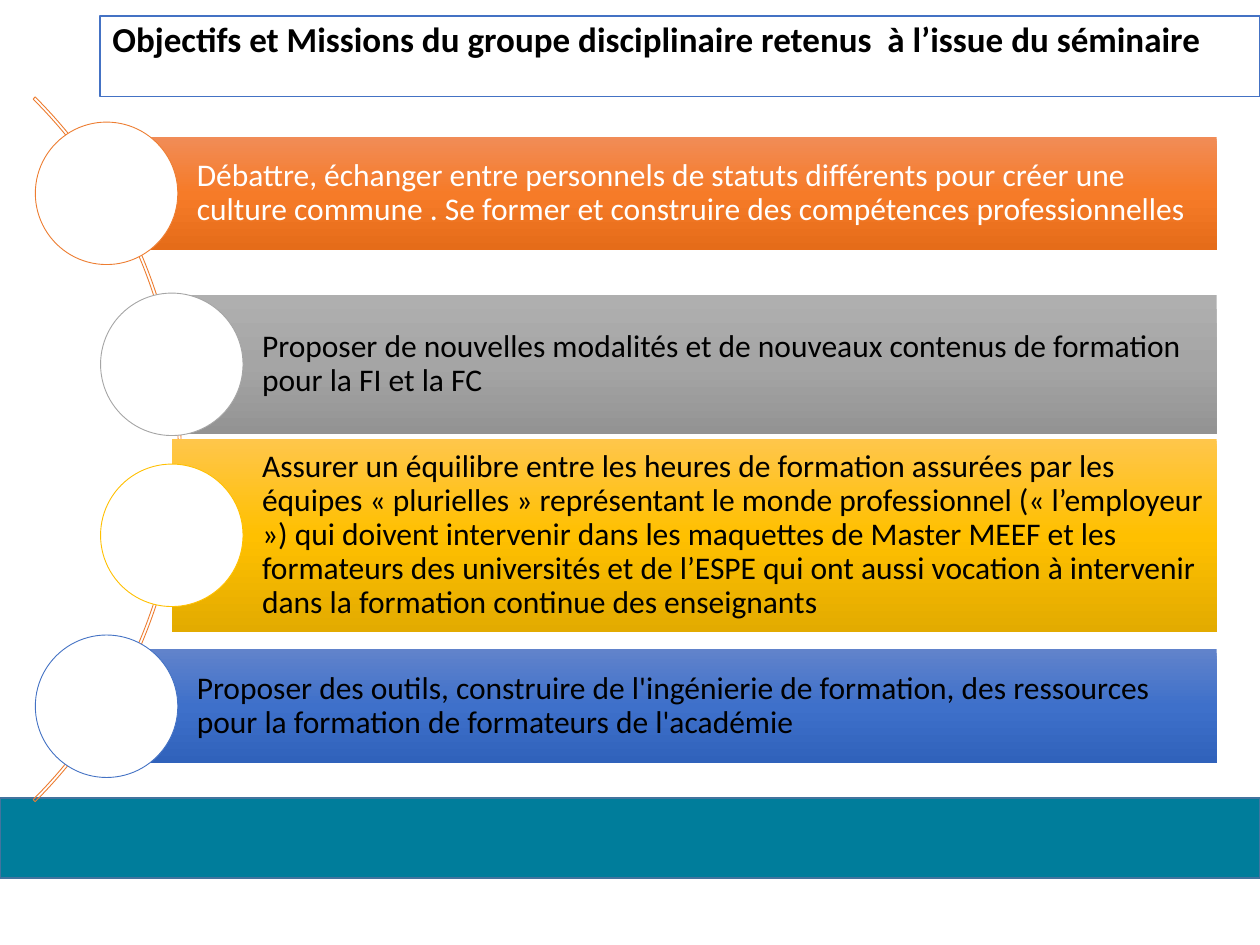
from copy import deepcopy

from pptx import Presentation
from pptx.dml.color import RGBColor
from pptx.enum.shapes import MSO_SHAPE
from pptx.enum.text import MSO_ANCHOR, MSO_AUTO_SIZE, PP_ALIGN
from pptx.oxml.ns import qn
from pptx.util import Pt

RECTANGLE = MSO_SHAPE.RECTANGLE
OVAL = MSO_SHAPE.OVAL
BLOCK_ARC = MSO_SHAPE.BLOCK_ARC
TOP = MSO_ANCHOR.TOP
MIDDLE = MSO_ANCHOR.MIDDLE
LEFT = PP_ALIGN.LEFT
NO_AUTOFIT = MSO_AUTO_SIZE.NONE

COLORS = {
    "white": "FFFFFF",
    "black": "000000",
    "teal": "007D9B",
    "teal_edge": "43739E",
    "orange": "ED7D31",
    "gray": "A5A5A5",
    "gold": "FFC000",
    "blue": "4472C4",
}
GRADIENTS = {
    "orange": ("F18C57", "F67B28", "E56C19"),
    "gray": ("AFAFAF", "A5A5A5", "939393"),
    "gold": ("FFC64B", "FFC000", "E3AB00"),
    "blue": ("6183CB", "3E70CA", "3062BB"),
}

TITLE = "Objectifs et Missions du groupe disciplinaire retenus  à l’issue du séminaire"
MISSIONS = [
    ("orange", "white", 20.2, 65,
     "Débattre, échanger entre personnels de statuts différents pour créer une "
     "culture commune . Se former et construire des compétences professionnelles"),
    ("gray", "black", 57.5, 79.4,
     "Proposer de nouvelles modalités et de nouveaux contenus de formation "
     "pour la FI et la FC"),
    ("gold", "black", 57.5, 110.2,
     "Assurer un équilibre entre les heures de formation assurées par les "
     "équipes « plurielles » représentant le monde professionnel "
     "(« l’employeur ») qui doivent intervenir dans les maquettes de Master "
     "MEEF et les formateurs des universités et de l’ESPE qui ont aussi "
     "vocation à intervenir dans la formation continue des enseignants"),
    ("blue", "black", 20.2, 65,
     "Proposer des outils, construire de l'ingénierie de formation, des "
     "ressources pour la formation de formateurs de l'académie "),
]
CIRCLE_SIZE = 81.4
FIRST_CENTER = 110.5
ROW_STEP = 97.7
BAR_RIGHT = 695.3


def rgb(name):
    return RGBColor.from_string(COLORS[name])


def write_text(shape, text, size=18, color="black", bold=False,
               anchor=MIDDLE, insets=(7.2, 3.6, 7.2, 3.6)):
    frame = shape.text_frame
    frame.word_wrap = True
    frame.auto_size = NO_AUTOFIT
    frame.vertical_anchor = anchor
    (frame.margin_left, frame.margin_top,
     frame.margin_right, frame.margin_bottom) = map(Pt, insets)
    paragraph = frame.paragraphs[0]
    paragraph.alignment = LEFT
    paragraph.line_spacing = 0.9
    run = paragraph.add_run()
    run.text = text
    run.font.name = "Calibri"
    run.font.size = Pt(size)
    run.font.bold = bold
    run.font.color.rgb = rgb(color)


def paint(shape, fill=None, line=None, line_width=1):
    if fill:
        shape.fill.solid()
        shape.fill.fore_color.rgb = rgb(fill)
    else:
        shape.fill.background()
    if line:
        shape.line.color.rgb = rgb(line)
        shape.line.width = Pt(line_width)
    else:
        shape.line.fill.background()


def paint_gradient(shape, colors):
    shape.fill.gradient()
    shape.fill.gradient_angle = 270
    stop_list = shape._element.spPr.find(qn("a:gradFill")).find(qn("a:gsLst"))
    stop_list.append(deepcopy(stop_list[0]))
    for index, (stop, color) in enumerate(zip(shape.fill.gradient_stops, colors)):
        stop.position = index / 2
        stop.color.rgb = RGBColor.from_string(color)


def add_shape(slide, kind, left, top, width, height, **paint_format):
    shape = slide.shapes.add_shape(kind, Pt(left), Pt(top), Pt(width), Pt(height))
    shape.shadow.inherit = False
    paint(shape, **paint_format)
    return shape


def add_title(slide):
    title = slide.shapes.title
    title.left, title.top, title.width, title.height = map(Pt, (57, 9.2, 663, 46))
    paint(title, fill="white", line="blue")
    write_text(title, TITLE, size=20, bold=True, anchor=TOP)


def add_arc(slide):
    arc = add_shape(slide, BLOCK_ARC, -466, -28, 569.5, 569.5,
                    line="orange", line_width=0.5)
    for index, value in enumerate((189, 27, 0.003)):
        arc.adjustments[index] = value


def add_mission(slide, center, theme, text_color, circle_left, height, text):
    bar_left = circle_left + CIRCLE_SIZE / 2
    bar = add_shape(slide, RECTANGLE, bar_left, center - height / 2,
                    BAR_RIGHT - bar_left, height)
    paint_gradient(bar, GRADIENTS[theme])
    write_text(bar, text, color=text_color, insets=(51.6, 3.6, 3.6, 3.6))
    add_shape(slide, OVAL, circle_left, center - CIRCLE_SIZE / 2,
              CIRCLE_SIZE, CIRCLE_SIZE, fill="white", line=theme, line_width=0.5)


def main():
    presentation = Presentation()
    presentation.slide_width = Pt(720)
    presentation.slide_height = Pt(540)
    slide = presentation.slides.add_slide(presentation.slide_layouts[5])
    add_shape(slide, RECTANGLE, 0, 456, 720, 45.6, fill="teal", line="teal_edge")
    add_title(slide)
    add_arc(slide)
    for row, mission in enumerate(MISSIONS):
        add_mission(slide, FIRST_CENTER + row * ROW_STEP, *mission)
    presentation.save("out.pptx")


if __name__ == "__main__":
    main()
